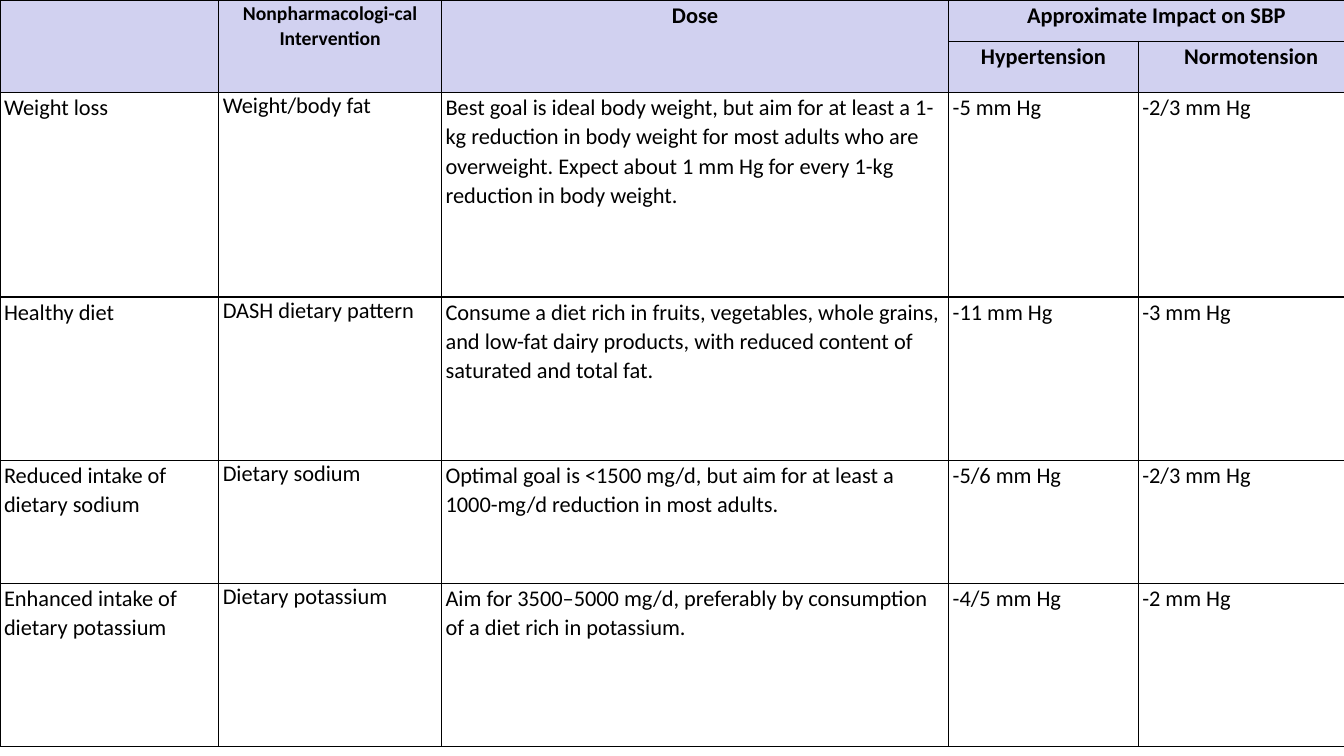
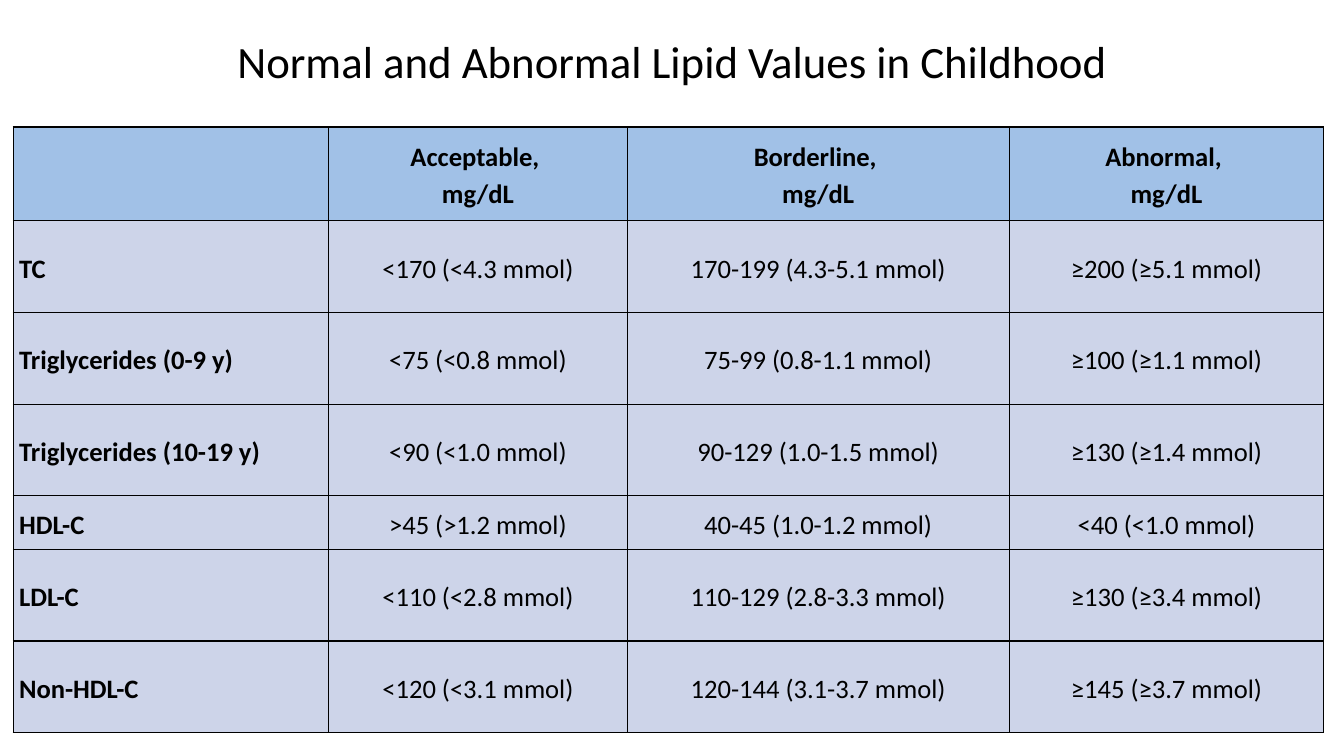
from pptx import Presentation
from pptx.dml.color import RGBColor
from pptx.enum import text
from pptx.oxml import parse_xml
from pptx.oxml.ns import nsdecls
from pptx.util import Inches, Pt

FONT = "Calibri"
BLACK, WHITE = "000000", "FFFFFF"
LAVENDER, SKY, MIST = "D1D1F0", "A1C1E7", "CDD4E9"
CENTER, LEFT = text.PP_ALIGN.CENTER, text.PP_ALIGN.LEFT
TOP, MIDDLE = text.MSO_ANCHOR.TOP, text.MSO_ANCHOR.MIDDLE

PRESSURE_ROWS = [
    ("", "Nonpharmacologi-cal Intervention", "Dose", "Approximate Impact on SBP", ""),
    ("", "", "", "Hypertension", "Normotension"),
    ("Weight loss", "Weight/body fat",
     "Best goal is ideal body weight, but aim for at least a 1-kg reduction in body weight "
     "for most adults who are overweight. Expect about 1 mm Hg for every 1-kg reduction in "
     "body weight.", "-5 mm Hg", "-2/3 mm Hg"),
    ("Healthy diet", "DASH dietary pattern",
     "Consume a diet rich in fruits, vegetables, whole grains, and low-fat dairy products, "
     "with reduced content of saturated and total fat.", "-11 mm Hg", "-3 mm Hg"),
    ("Reduced intake of dietary sodium", "Dietary sodium",
     "Optimal goal is <1500 mg/d, but aim for at least a 1000-mg/d reduction in most adults.",
     "-5/6 mm Hg", "-2/3 mm Hg"),
    ("Enhanced intake of dietary potassium", "Dietary potassium",
     "Aim for 3500–5000 mg/d, preferably by consumption of a diet rich in potassium.",
     "-4/5 mm Hg", "-2 mm Hg"),
]
PRESSURE_WIDTHS = [2.17, 2.21, 5.03, 1.88, 2.24]
PRESSURE_HEIGHTS = [0.41, 0.48, 2.03, 1.62, 1.22, 1.62]
PRESSURE_MERGES = [((0, 0), (1, 0)), ((0, 1), (1, 1)), ((0, 2), (1, 2)), ((0, 3), (0, 4))]

LIPID_TITLE = "Normal and Abnormal Lipid Values in Childhood"
LIPID_ROWS = [
    ("", "Acceptable, \nmg/dL", "Borderline, \nmg/dL", "Abnormal, \nmg/dL"),
    ("TC", "<170 (<4.3 mmol)", "170-199 (4.3-5.1 mmol)", "≥200 (≥5.1 mmol)"),
    ("Triglycerides (0-9 y)", "<75 (<0.8 mmol)", "75-99 (0.8-1.1 mmol)", "≥100 (≥1.1 mmol)"),
    ("Triglycerides (10-19 y)", "<90 (<1.0 mmol)", "90-129 (1.0-1.5 mmol)", "≥130 (≥1.4 mmol)"),
    ("HDL-C", ">45 (>1.2 mmol)", "40-45 (1.0-1.2 mmol)", "<40 (<1.0 mmol)"),
    ("LDL-C", "<110 (<2.8 mmol)", "110-129 (2.8-3.3 mmol)", "≥130 (≥3.4 mmol)"),
    ("Non-HDL-C", "<120 (<3.1 mmol)", "120-144 (3.1-3.7 mmol)", "≥145 (≥3.7 mmol)"),
]
LIPID_WIDTHS = [3.13, 2.96, 3.79, 3.12]
LIPID_HEIGHTS = [0.93, 0.91, 0.91, 0.91, 0.53, 0.91, 0.91]


def color(value):
    """Turn a hex string into a colour."""
    return RGBColor.from_string(value)


def write(para, content, size, bold=False, align=LEFT, spacing=1.0):
    """Fill a paragraph with styled text, breaking lines at newlines."""
    para.alignment, para.line_spacing = align, spacing
    para.font.size = Pt(size)
    for index, line in enumerate(content.split("\n")):
        if index:
            para.add_line_break()
        if line:
            span = para.add_run()
            span.text = line
            span.font.name, span.font.size, span.font.bold = FONT, Pt(size), bold
            span.font.color.rgb = color(BLACK)


def draw_borders(cell):
    """Give a cell thin black borders on all four sides."""
    properties = cell._tc.get_or_add_tcPr()
    for side in ("lnL", "lnR", "lnT", "lnB"):
        properties.append(parse_xml(
            f'<a:{side} {nsdecls("a")} w="12700"><a:solidFill><a:srgbClr val="{BLACK}"/>'
            f'</a:solidFill></a:{side}>'))


def add_grid(page, left, top, rows, widths, heights, margins, anchor, style, merges=()):
    """Add a bordered table whose style function gives each cell's fill and text style."""
    frame = page.shapes.add_table(len(rows), len(widths), Inches(left), Inches(top),
                                  Inches(sum(widths)), Inches(sum(heights)))
    table = frame.table
    table.horz_banding = False
    for column, width in zip(table.columns, widths):
        column.width = Inches(width)
    for line, height in zip(table.rows, heights):
        line.height = Inches(height)
    side, edge = (Inches(margin) for margin in margins)
    for row, values in enumerate(rows):
        for col, value in enumerate(values):
            cell = table.cell(row, col)
            fill, look = style(row, col)
            draw_borders(cell)
            cell.fill.solid()
            cell.fill.fore_color.rgb = color(fill)
            cell.margin_left = cell.margin_right = side
            cell.margin_top = cell.margin_bottom = edge
            cell.vertical_anchor = anchor
            write(cell.text_frame.paragraphs[0], value, **look)
    for first, last in merges:
        table.cell(*first).merge(table.cell(*last))


def pressure_style(row, col):
    """Style the blood pressure table: two header rows over plain rows."""
    if row < 2:
        return LAVENDER, dict(size=14 if col == 1 else 16, bold=True, align=CENTER, spacing=1.07)
    return WHITE, dict(size=16, spacing=1.0 if col == 1 else 1.07)


def lipid_style(row, col):
    """Style the lipid table: bold header row and label column."""
    return (MIST if row else SKY), dict(size=19, bold=row == 0 or col == 0,
                                        align=CENTER if col else LEFT, spacing=1.15)


def add_title(page, content):
    """Add a centred slide title."""
    box = page.shapes.add_textbox(Inches(2.17), Inches(0.01), Inches(9), Inches(1.25))
    box.text_frame.word_wrap = True
    box.text_frame.vertical_anchor = MIDDLE
    write(box.text_frame.paragraphs[0], content, 32, align=CENTER, spacing=0.9)


def main():
    """Build and save the deck."""
    deck = Presentation()
    deck.slide_width, deck.slide_height = Inches(13.33), Inches(7.5)
    blank = deck.slide_layouts[6]
    add_grid(deck.slides.add_slide(blank), 0, 0, PRESSURE_ROWS, PRESSURE_WIDTHS,
             PRESSURE_HEIGHTS, (0.04, 0), TOP, pressure_style, PRESSURE_MERGES)
    page = deck.slides.add_slide(blank)
    add_title(page, LIPID_TITLE)
    add_grid(page, 0.13, 1.26, LIPID_ROWS, LIPID_WIDTHS, LIPID_HEIGHTS,
             (0.06, 0.06), MIDDLE, lipid_style)
    deck.save("out.pptx")


if __name__ == "__main__":
    main()
